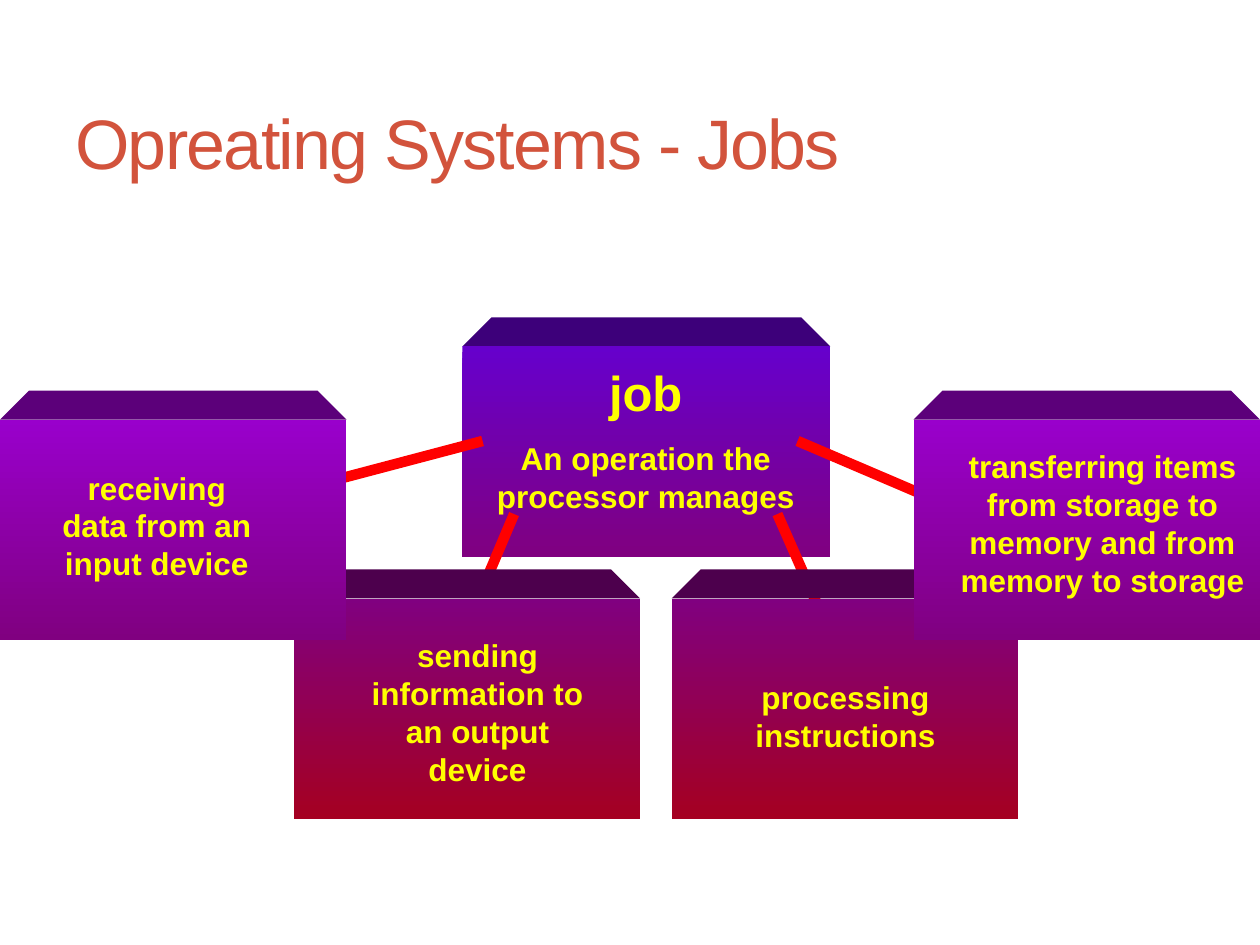
"""Build a slide showing a job and the four operations around it."""
from lxml.etree import SubElement
from pptx import Presentation
from pptx.dml.color import RGBColor
from pptx.enum.shapes import MSO_CONNECTOR, MSO_SHAPE
from pptx.enum.text import MSO_ANCHOR, PP_ALIGN
from pptx.oxml.ns import qn
from pptx.util import Inches, Pt

COLORS = {
    "title": "D2533C", "text": "FFFF00", "line": "FF0000",
    "blue": "6600CC", "violet": "9900CC", "purple": "800080", "red": "A50021",
    "blue_top": "3D007A", "violet_top": "5C007A", "purple_top": "4D004D",
}
DEPTH = 0.23


def color(name):
    return RGBColor.from_string(COLORS[name])


def add_text(s, at, lines, name="text", bold=True, align=PP_ALIGN.CENTER, anchor=MSO_ANCHOR.TOP):
    tf = s.shapes.add_textbox(*map(Inches, at)).text_frame
    tf.word_wrap = True
    tf.vertical_anchor = anchor
    for i, (text, size) in enumerate(lines):
        p = tf.add_paragraph() if i else tf.paragraphs[0]
        p.alignment = align
        if i:
            p.space_before = Pt(10)
        r = p.add_run()
        r.text = text
        r.font.name = "Arial"
        r.font.size = Pt(size)
        r.font.bold = bold
        r.font.color.rgb = color(name)
    return tf


prs = Presentation()
prs.slide_width, prs.slide_height = Inches(10), Inches(7.5)
s = prs.slides.add_slide(prs.slide_layouts[6])

tf = add_text(s, (0.5, 0.58, 9, 1.08), [("Opreating Systems - Jobs", 40)],
              "title", False, PP_ALIGN.LEFT, MSO_ANCHOR.MIDDLE)
tf.paragraphs[0].runs[0].font._element.set("spc", "-100")

blocks = [
    (None, (3.67, 2.75, 2.92, 1.67), ("blue", "purple"), (3.5, 2.83, 3.25, 1.32),
     [("job", 28), ("An operation the processor manages", 18)]),
    ((6.5, 4.83, 6.17, 4.08), (5.33, 4.75, 2.75, 1.75), ("purple", "red"), (5.5, 5.33, 2.42, 0.7),
     [("processing instructions", 18)]),
    ((4.08, 4.08, 3.83, 4.67), (2.33, 4.75, 2.75, 1.75), ("purple", "red"), (2.75, 5, 2.08, 1.3),
     [("sending information to an output device", 18)]),
    ((6.33, 3.5, 7.5, 4), (7.25, 3.33, 2.75, 1.75), ("violet", "purple"), (7.5, 3.5, 2.5, 1.3),
     [("transferring items from storage to memory and from memory to storage", 18)]),
    ((3.83, 3.5, 2.58, 3.83), (0, 3.33, 2.75, 1.75), ("violet", "purple"), (0.33, 3.67, 1.83, 1),
     [("receiving data from an input device", 18)]),
]

for link, (x, y, w, h), shades, text_at, lines in blocks:
    if link:
        cxn = s.shapes.add_connector(MSO_CONNECTOR.STRAIGHT, *map(Inches, link))
        cxn.line.color.rgb = color("line")
        cxn.line.width = Pt(6)
        SubElement(cxn._element.spPr, qn("a:effectLst"))

    top = s.shapes.add_shape(MSO_SHAPE.TRAPEZOID, *map(Inches, (x, y - DEPTH, w, DEPTH)))
    top.adjustments[0] = 1
    top.fill.solid()
    top.fill.fore_color.rgb = color(shades[0] + "_top")

    front = s.shapes.add_shape(MSO_SHAPE.RECTANGLE, *map(Inches, (x, y, w, h)))
    front.fill.gradient()
    front.fill.gradient_angle = 270
    for stop, position, shade in zip(front.fill.gradient_stops, (0, 1), shades):
        stop.position = position
        stop.color.rgb = color(shade)

    for sp in (top, front):
        sp.line.fill.background()
        sp.shadow.inherit = False

    add_text(s, text_at, lines)

prs.save("out.pptx")
